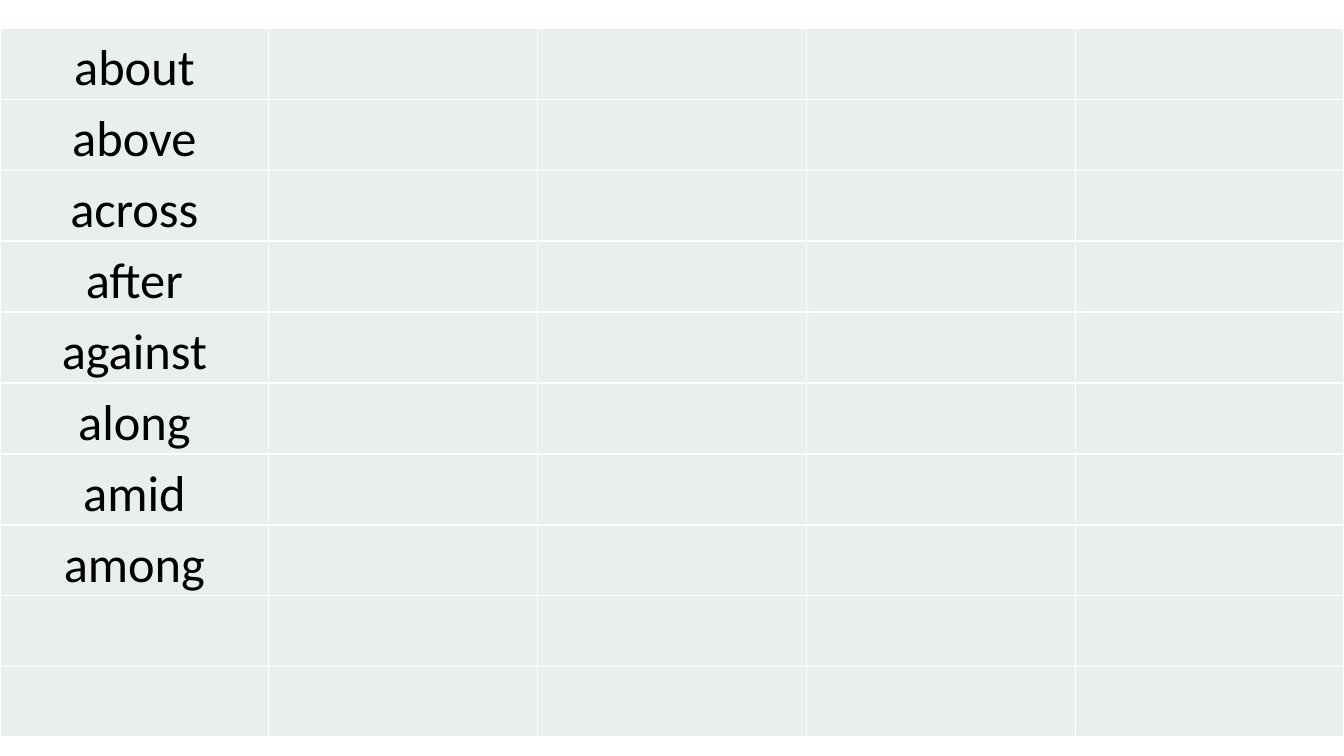
from lxml.etree import SubElement
from pptx import Presentation
from pptx.dml.color import RGBColor
from pptx.enum.text import PP_ALIGN as Align
from pptx.oxml.ns import qn
from pptx.util import Inches, Pt

WIDTH, HEIGHT = 13.33, 7.5
COLS, ROWS = 5, 10
TOP, ROW_HEIGHT = 0.28, 0.7
PREPOSITIONS = ["about", "above", "across", "after",
                "against", "along", "amid", "among"]


def rgb(value):
    return RGBColor.from_string(value)


def set_borders(cell, color, width):
    tcPr = cell._tc.get_or_add_tcPr()
    for side in ("lnL", "lnR", "lnT", "lnB"):
        ln = SubElement(tcPr, qn(f"a:{side}"), w=str(Pt(width)))
        fill = SubElement(ln, qn("a:solidFill"))
        SubElement(fill, qn("a:srgbClr"), val=color)


def style_cell(cell, fill, border, width=1):
    # Borders come before the fill in the cell properties
    set_borders(cell, border, width)
    cell.fill.solid()
    cell.fill.fore_color.rgb = rgb(fill)
    cell.margin_left = cell.margin_right = Inches(0.07)
    cell.margin_top = cell.margin_bottom = 0


def write(cell, text, *, size, font="Calibri", color="000000",
          align=Align.CENTER, spacing=1.15):
    p = cell.text_frame.paragraphs[0]
    p.alignment = align
    p.line_spacing = spacing
    r = p.add_run()
    r.text = text
    r.font.size = Pt(size)
    r.font.name = font
    r.font.color.rgb = rgb(color)


def add_grid(s):
    frame = s.shapes.add_table(ROWS, COLS, 0, Inches(TOP), Inches(WIDTH),
                               Inches(ROWS * ROW_HEIGHT))
    table = frame.table
    table.first_row = table.horz_banding = False
    for cell in table.iter_cells():
        style_cell(cell, fill="E8EFEC", border="FFFFFF")
    return table


def main():
    prs = Presentation()
    prs.slide_width, prs.slide_height = Inches(WIDTH), Inches(HEIGHT)
    s = prs.slides.add_slide(prs.slide_layouts[6])

    # Word list in the first column, the other columns left to fill in
    table = add_grid(s)
    for row, word in enumerate(PREPOSITIONS):
        write(table.cell(row, 0), word, size=36)

    prs.save("out.pptx")


if __name__ == "__main__":
    main()
